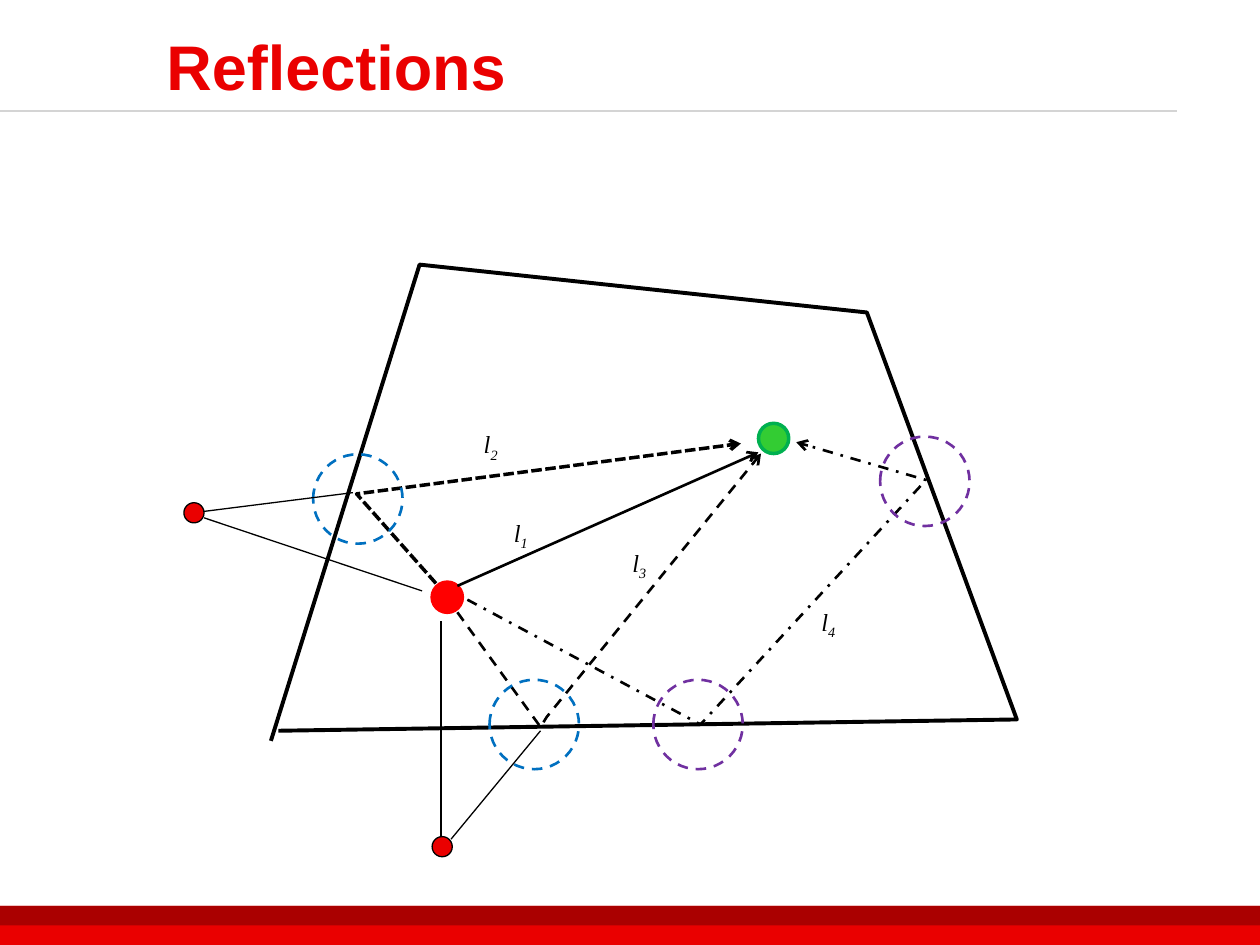
from dataclasses import dataclass

from lxml.etree import SubElement
from pptx import Presentation
from pptx.dml.color import RGBColor
from pptx.enum.dml import MSO_LINE
from pptx.enum.shapes import MSO_CONNECTOR, MSO_SHAPE
from pptx.enum.text import MSO_ANCHOR, PP_ALIGN
from pptx.oxml.ns import qn
from pptx.util import Inches, Pt


@dataclass(frozen=True)
class Theme:
    """Colours, fonts and type sizes of the slide."""
    red: str = "EA0000"
    dark_red: str = "AA0000"
    rule: str = "D4D4D4"
    ink: str = "000000"
    source: str = "FF0000"
    receiver: str = "33CC33"
    receiver_edge: str = "00B050"
    first_order: str = "0070C0"
    second_order: str = "7030A0"
    title_font: str = "Arial"
    label_font: str = "Times New Roman"
    title_size: int = 36
    label_size: int = 14


THEME = Theme()


def style_font(font, name, size, color):
    """Set the family, size and colour of a font."""
    font.name, font.size = name, Pt(size)
    font.color.rgb = RGBColor.from_string(color)


def style_line(shape, color, width, dash=None, arrow=False):
    """Set a line's colour, width, dash and optional arrowhead."""
    shape.line.color.rgb = RGBColor.from_string(color)
    shape.line.width = Pt(width)
    if dash:
        shape.line.dash_style = dash
    if arrow:
        outline = shape._element.spPr.find(qn("a:ln"))
        SubElement(outline, qn("a:tailEnd"), type="arrow")


def add_filled(slide, preset, box, fill=None):
    """Add a preset shape without shadow or outline."""
    shape = slide.shapes.add_shape(preset, *map(Inches, box))
    shape.shadow.inherit = False
    if fill:
        shape.fill.solid()
        shape.fill.fore_color.rgb = RGBColor.from_string(fill)
    else:
        shape.fill.background()
    shape.line.fill.background()
    return shape


def add_circle(slide, center, diameter, fill, edge, width, dash=None):
    """Add a circle around a centre point."""
    x, y = (value - diameter / 2 for value in center)
    circle = add_filled(slide, MSO_SHAPE.OVAL, (x, y, diameter, diameter), fill)
    style_line(circle, edge, width, dash)


def add_straight(slide, start, end, color, width, arrow=False):
    """Add a straight connector without shadow."""
    ray = slide.shapes.add_connector(
        MSO_CONNECTOR.STRAIGHT, *map(Inches, (*start, *end)))
    style_line(ray, color, width, arrow=arrow)
    SubElement(ray._element.spPr, qn("a:effectLst"))


def add_polyline(slide, points, width, dash=None, arrow=False):
    """Add an open, unfilled outline through the points."""
    start, *rest = [(Inches(x), Inches(y)) for x, y in points]
    builder = slide.shapes.build_freeform(*start)
    builder.add_line_segments(rest, close=False)
    outline = builder.convert_to_shape()
    outline.shadow.inherit = False
    outline.fill.background()
    style_line(outline, THEME.ink, width, dash, arrow)


def add_path_label(slide, position, number):
    """Add an italic path name with its number as subscript."""
    label = slide.shapes.add_textbox(
        *map(Inches, (*position, 0.55, 0.33)))
    label.text_frame.word_wrap = True
    paragraph = label.text_frame.paragraphs[0]
    for text in ("l", str(number)):
        run = paragraph.add_run()
        run.text = text
        style_font(run.font, THEME.label_font, THEME.label_size, THEME.ink)
        run.font.italic = True
    run.font._element.set("baseline", "-25000")


def build_header(slide, left, top, width, height):
    """Place the title and the rule beneath it."""
    rule_y = top + height - 0.07
    add_straight(slide, (0, rule_y), (9.34, rule_y), THEME.rule, 1.5)
    title = slide.shapes.title
    title.left, title.top, title.width, title.height = map(
        Inches, (left, top, width, height))
    frame = title.text_frame
    frame.text = "Reflections"
    frame.vertical_anchor = MSO_ANCHOR.MIDDLE
    frame.paragraphs[0].alignment = PP_ALIGN.LEFT
    font = frame.paragraphs[0].runs[0].font
    style_font(font, THEME.title_font, THEME.title_size, THEME.red)
    font.bold = True


def build_footer(slide, left, top, width, height):
    """Place the two-tone footer band."""
    for color, depth in ((THEME.red, height), (THEME.dark_red, height / 2)):
        add_filled(slide, MSO_SHAPE.RECTANGLE, (left, top, width, depth), color)


def build_room(slide, left, top):
    """Place the room, its sound paths and its image sources."""
    def at(x, y):
        """Move a point of the room to the slide."""
        return left + x, top + y

    walls = ((0.69, 3.78), (1.87, 0), (5.42, 0.38), (6.61, 3.61), (0.75, 3.7))
    add_polyline(slide, [at(*corner) for corner in walls], 2.25)
    add_circle(slide, at(2.09, 2.64), 0.24, THEME.source, THEME.source, 2)
    add_circle(slide, at(4.68, 1.38), 0.24,
               THEME.receiver, THEME.receiver_edge, 2)

    add_straight(slide, at(2.17, 2.55), at(4.56, 1.49), THEME.ink, 1.5, True)
    reflected_paths = (
        (((2.17, 2.76), (2.83, 3.67), (2.88, 3.59), (4.58, 1.5)),
         1.5, MSO_LINE.DASH),
        (((2, 2.53), (1.37, 1.82), (4.42, 1.42)), 2, MSO_LINE.SQUARE_DOT),
        (((2.25, 2.66), (4.1, 3.65), (5.89, 1.71), (4.86, 1.41)),
         1.5, MSO_LINE.DASH_DOT),
    )
    for points, width, dash in reflected_paths:
        add_polyline(slide, [at(*p) for p in points], width, dash, True)

    reflection_points = (
        (1.38, 1.86, THEME.first_order), (2.78, 3.65, THEME.first_order),
        (5.88, 1.72, THEME.second_order), (4.08, 3.65, THEME.second_order),
    )
    for x, y, color in reflection_points:
        add_circle(slide, at(x, y), 0.71, None, color, 1.5, MSO_LINE.DASH)

    construction_rays = (
        ((1.34, 1.81), (0.15, 1.96)), ((0.16, 2.01), (1.89, 2.59)),
        ((2.83, 3.7), (2.12, 4.56)), ((2.04, 2.83), (2.04, 4.56)),
    )
    for start, end in construction_rays:
        add_straight(slide, at(*start), at(*end), THEME.ink, 0.75)
    for image_source in ((0.08, 1.97), (2.05, 4.62)):
        add_circle(slide, at(*image_source), 0.16, THEME.red, THEME.ink, 0.75)

    path_labels = ((2.52, 1.96), (2.28, 1.26), (3.46, 2.2), (4.96, 2.67))
    for number, position in enumerate(path_labels, start=1):
        add_path_label(slide, at(*position), number)


def main():
    """Build and save the slide."""
    deck = Presentation()
    deck.slide_width, deck.slide_height = Inches(10), Inches(7.5)
    slide = deck.slides.add_slide(deck.slide_layouts[5])
    build_footer(slide, 0, 7.19, 10, 0.31)
    build_header(slide, 1.22, 0.08, 8.74, 0.87)
    build_room(slide, 1.46, 2.1)
    deck.save("out.pptx")


if __name__ == "__main__":
    main()
